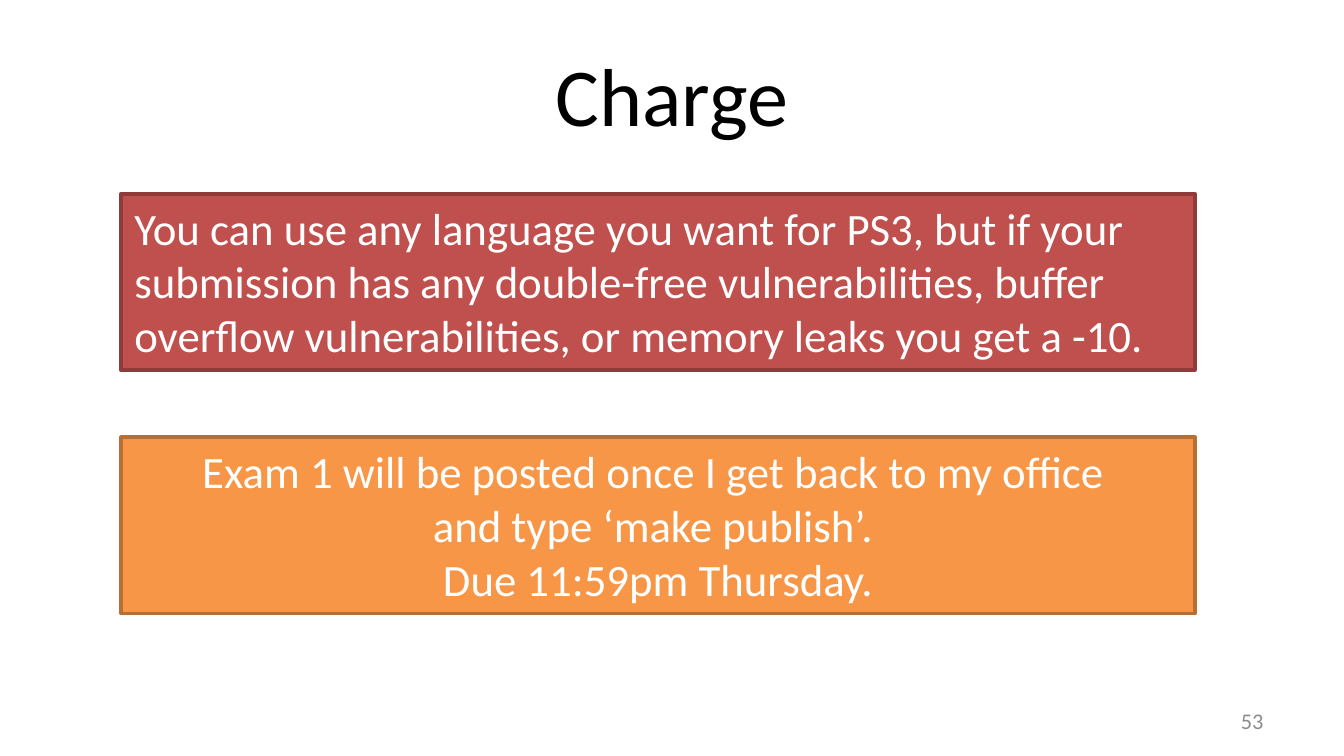
import pptx
import pptx.dml.color
import pptx.enum.shapes
import pptx.enum.text
import pptx.util

Cm = pptx.util.Cm
Pt = pptx.util.Pt
RGBColor = pptx.dml.color.RGBColor
Align = pptx.enum.text.PP_ALIGN
Anchor = pptx.enum.text.MSO_ANCHOR

BLACK = RGBColor(0x00, 0x00, 0x00)
WHITE = RGBColor(0xFF, 0xFF, 0xFF)
GRAY = RGBColor(0x8C, 0x8C, 0x8C)
RED = RGBColor(0xC0, 0x50, 0x4D)
DARK_RED = RGBColor(0x8E, 0x3B, 0x39)
ORANGE = RGBColor(0xF7, 0x96, 0x46)
DARK_ORANGE = RGBColor(0xB7, 0x6F, 0x34)


def write_lines(frame, lines, size, color, alignment, anchor):
    """Fill a text frame with one paragraph per line."""
    frame.word_wrap = True
    frame.vertical_anchor = anchor
    for index, line in enumerate(lines):
        paragraph = frame.add_paragraph() if index else frame.paragraphs[0]
        paragraph.alignment = alignment
        run = paragraph.add_run()
        run.text = line
        run.font.name = "Calibri"
        run.font.size = Pt(size)
        run.font.color.rgb = color


def add_label(slide, box, text, size, color, alignment):
    """Place a single line of plain text, vertically centred in its box."""
    label = slide.shapes.add_textbox(*box)
    write_lines(label.text_frame, [text], size, color, alignment, Anchor.MIDDLE)


def add_notice(slide, box, lines, fill, outline, alignment):
    """Place a filled rectangle holding an announcement."""
    notice = slide.shapes.add_shape(pptx.enum.shapes.MSO_SHAPE.RECTANGLE, *box)
    notice.shadow.inherit = False
    notice.fill.solid()
    notice.fill.fore_color.rgb = fill
    notice.line.color.rgb = outline
    notice.line.width = Pt(2)
    write_lines(notice.text_frame, lines, 24, WHITE, alignment, Anchor.TOP)
    notice.text_frame.auto_size = pptx.enum.text.MSO_AUTO_SIZE.SHAPE_TO_FIT_TEXT


def main():
    """Build and save the slide."""
    deck = pptx.Presentation()
    deck.slide_width = Cm(25.4)
    deck.slide_height = Cm(14.28)
    slide = deck.slides.add_slide(deck.slide_layouts[6])

    title_box = (Cm(1.27), Cm(0.58), Cm(22.86), Cm(2.39))
    add_label(slide, title_box, "Charge", 44, BLACK, Align.CENTER)
    number_box = (Cm(18.2), Cm(13.23), Cm(5.93), Cm(0.76))
    add_label(slide, number_box, "53", 12, GRAY, Align.RIGHT)

    penalty = ["You can use any language you want for PS3, but if your submission "
               "has any double-free vulnerabilities, buffer overflow "
               "vulnerabilities, or memory leaks you get a -10."]
    exam = ["Exam 1 will be posted once I get back to my office ",
            "and type ‘make publish’. ",
            "Due 11:59pm Thursday."]
    notices = [(3.66, penalty, RED, DARK_RED, Align.LEFT),
               (8.26, exam, ORANGE, DARK_ORANGE, Align.CENTER)]
    for top, lines, fill, outline, alignment in notices:
        box = (Cm(2.29), Cm(top), Cm(20.29), Cm(3.33))
        add_notice(slide, box, lines, fill, outline, alignment)

    deck.save("out.pptx")


if __name__ == "__main__":
    main()
